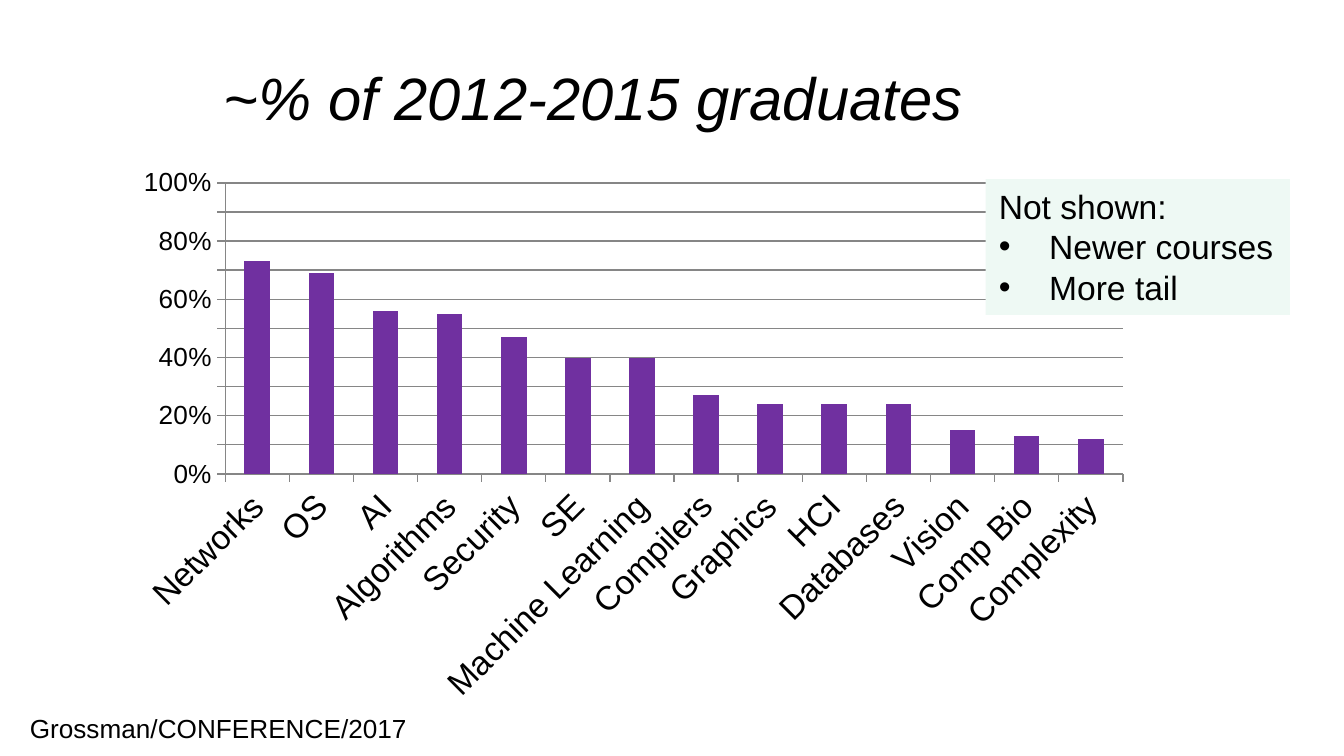
from lxml.etree import SubElement
from pptx import Presentation
from pptx.chart.data import CategoryChartData
from pptx.dml.color import RGBColor
from pptx.enum.chart import XL_CHART_TYPE as ChartType, XL_TICK_MARK as TickMark
from pptx.enum.shapes import MSO_SHAPE as Preset
from pptx.enum.text import MSO_ANCHOR as Anchor, MSO_AUTO_SIZE as AutoSize, PP_ALIGN as Align
from pptx.oxml import parse_xml
from pptx.oxml.ns import nsdecls, qn
from pptx.util import Pt

FONT = "Arial"
BLACK = RGBColor(0x00, 0x00, 0x00)
PURPLE = RGBColor(0x70, 0x30, 0xA0)
MINT = RGBColor(0xEE, 0xF9, 0xF4)
GRAY = RGBColor(0x86, 0x86, 0x86)

GRADUATE_SHARES = {
    "Networks": 0.73, "OS": 0.69, "AI": 0.56, "Algorithms": 0.55,
    "Security": 0.47, "SE": 0.4, "Machine Learning": 0.4,
    "Compilers": 0.27, "Graphics": 0.24, "HCI": 0.24, "Databases": 0.24,
    "Vision": 0.15, "Comp Bio": 0.13, "Complexity": 0.12,
}


def in_points(box):
    return [Pt(length) for length in box]


def style_font(font, size, italic=False):
    font.name = FONT
    font.size = Pt(size)
    font.italic = italic
    font.color.rgb = BLACK


def add_run(paragraph, text, size, italic=False):
    run = paragraph.add_run()
    run.text = text
    style_font(run.font, size, italic)


def add_centred_line(slide, box, text, size, anchor, italic=False):
    frame = slide.shapes.add_textbox(*in_points(box)).text_frame
    frame.word_wrap = True
    frame.vertical_anchor = anchor
    paragraph = frame.paragraphs[0]
    paragraph.alignment = Align.CENTER
    add_run(paragraph, text, size, italic)


def set_plot_area(chart, **fractions):
    """Fix the inner plot area as fractions (x, y, w, h) of the chart."""
    plot_area = chart._chartSpace.chart.plotArea
    for layout in plot_area.findall(qn("c:layout")):
        plot_area.remove(layout)
    lengths = "".join(f'<c:{name} val="{value}"/>' for name, value in fractions.items())
    plot_area.insert(0, parse_xml(
        f'<c:layout {nsdecls("c")}><c:manualLayout><c:layoutTarget val="inner"/>'
        f'<c:xMode val="edge"/><c:yMode val="edge"/>{lengths}'
        "</c:manualLayout></c:layout>"))


def style_axis(axis, size):
    axis.major_tick_mark = TickMark.OUTSIDE
    axis.minor_tick_mark = TickMark.NONE
    axis.format.line.color.rgb = GRAY
    axis.format.line.width = Pt(0.75)
    style_font(axis.tick_labels.font, size)


def add_share_chart(slide, box):
    data = CategoryChartData(number_format="0%")
    data.categories = GRADUATE_SHARES.keys()
    data.add_series("Series 1", GRADUATE_SHARES.values())
    chart = slide.shapes.add_chart(ChartType.COLUMN_CLUSTERED, *in_points(box), data).chart
    style_font(chart.font, 10)
    chart.has_legend = False
    chart.has_title = False
    set_plot_area(chart, x=0.1, y=0.05, w=0.88, h=0.52)

    plot = chart.plots[0]
    plot.gap_width = 150
    plot.vary_by_categories = False
    fill = plot.series[0].format.fill
    fill.solid()
    fill.fore_color.rgb = PURPLE

    category_axis = chart.category_axis
    style_axis(category_axis, 18)
    label_body = category_axis._element.find(qn("c:txPr")).find(qn("a:bodyPr"))
    label_body.set("rot", str(-45 * 60000))
    label_body.set("vert", "horz")

    value_axis = chart.value_axis
    style_axis(value_axis, 14)
    value_axis.minimum_scale = 0
    value_axis.maximum_scale = 1
    value_axis.major_unit = 0.1
    value_axis.tick_labels.number_format = "0%"
    value_axis.tick_labels.number_format_is_linked = False
    grid_line = value_axis.major_gridlines.format.line
    grid_line.color.rgb = GRAY
    grid_line.width = Pt(0.75)


def add_bullet(paragraph, indent):
    properties = paragraph._p.get_or_add_pPr()
    properties.set("marL", str(Pt(indent)))
    properties.set("indent", str(-Pt(indent)))
    SubElement(properties, qn("a:buFont")).set("typeface", FONT)
    SubElement(properties, qn("a:buChar")).set("char", "•")


def add_note(slide, box, heading, items):
    shape = slide.shapes.add_shape(Preset.RECTANGLE, *in_points(box))
    shape.shadow.inherit = False
    shape.fill.solid()
    shape.fill.fore_color.rgb = MINT
    shape.line.fill.background()
    frame = shape.text_frame
    frame.word_wrap = False
    frame.auto_size = AutoSize.SHAPE_TO_FIT_TEXT
    frame.vertical_anchor = Anchor.TOP
    for index, text in enumerate([heading, *items]):
        paragraph = frame.add_paragraph() if index else frame.paragraphs[0]
        paragraph.alignment = Align.LEFT
        if index:
            add_bullet(paragraph, 27)
        add_run(paragraph, text, 18)


def main():
    presentation = Presentation()
    presentation.slide_width = Pt(720)
    presentation.slide_height = Pt(405)
    slide = presentation.slides.add_slide(presentation.slide_layouts[6])
    add_centred_line(slide, (12, 18, 612, 68), "~% of 2012-2015 graduates",
                     32, Anchor.MIDDLE, italic=True)
    add_centred_line(slide, (-18, 378, 270, 27), "Grossman/CONFERENCE/2017",
                     14, Anchor.TOP)
    add_share_chart(slide, (66, 83, 546.5, 300))
    add_note(slide, (528, 96, 163, 72.7), "Not shown:", ["Newer courses", "More tail"])
    presentation.save("out.pptx")


if __name__ == "__main__":
    main()
